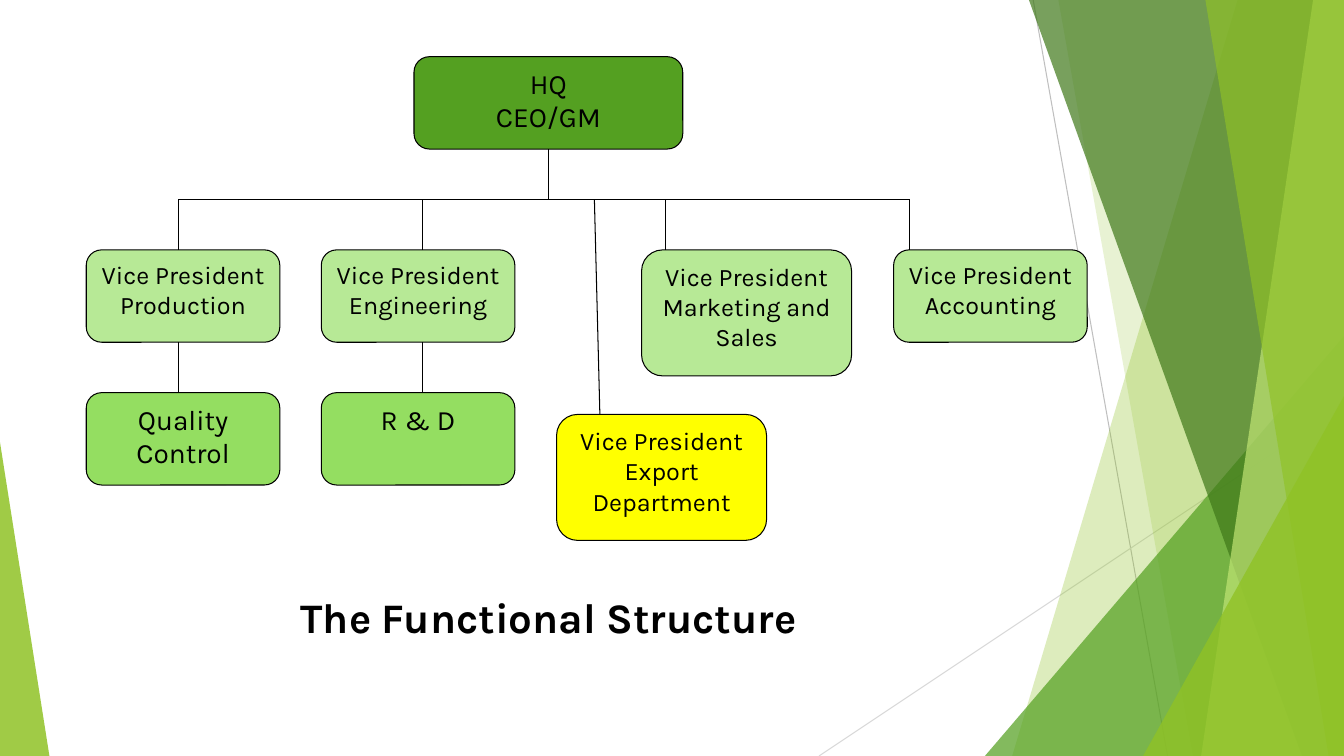
from pptx import Presentation
from pptx.dml.color import RGBColor
from pptx.enum.shapes import MSO_CONNECTOR as Link, MSO_SHAPE as Kind
from pptx.enum.text import MSO_ANCHOR as Anchor, PP_ALIGN as Align
from pptx.oxml.ns import qn
from pptx.util import Pt
from lxml.etree import SubElement

HUES = {
    "black": "000000", "lime": "90C226", "green": "54A021", "moss": "3F7819",
    "pale": "C0E474", "mint": "B7E996", "leaf": "94DE61", "yellow": "FFFF00",
    "grey": "BFBFBF", "mist": "D9D9D9",
}
WIDE, HIGH = 960, 540


class Chart:
    font = "Karla"

    def __init__(self, slide):
        self.slide = slide
        self.shapes = slide.shapes

    def hue(self, name):
        return RGBColor.from_string(HUES[name])

    def paint(self, shape, hue, alpha=100):
        shape.shadow.inherit = False
        shape.fill.solid()
        shape.fill.fore_color.rgb = self.hue(hue)
        if alpha < 100:
            color = shape._element.spPr.find(qn("a:solidFill"))[0]
            SubElement(color, qn("a:alpha"), val=str(alpha * 1000))

    def label(self, frame, text, size, bold=False):
        frame.word_wrap = True
        frame.margin_left = frame.margin_right = Pt(3.6)
        frame.margin_top = frame.margin_bottom = Pt(3.6)
        frame.vertical_anchor = Anchor.TOP
        frame.text = text
        for para in frame.paragraphs:
            para.alignment = Align.CENTER
            font = para.font
            font.name, font.size, font.bold = self.font, Pt(size), bold
            font.color.rgb = self.hue("black")

    def title(self, text, x, y, w, h):
        shape = self.shapes.title
        shape.left, shape.top, shape.width, shape.height = map(Pt, (x, y, w, h))
        self.label(shape.text_frame, text, 30, True)

    def box(self, text, x, y, w, h, hue, size=18):
        shape = self.shapes.add_shape(Kind.ROUNDED_RECTANGLE, *map(Pt, (x, y, w, h)))
        self.paint(shape, hue)
        shape.line.color.rgb = self.hue("black")
        shape.line.width = Pt(0.75)
        self.label(shape.text_frame, text, size)

    def line(self, x1, y1, x2, y2, hue="black"):
        link = self.shapes.add_connector(Link.STRAIGHT, *map(Pt, (x1, y1, x2, y2)))
        link.line.color.rgb = self.hue(hue)
        link.line.width = Pt(0.75)
        SubElement(link._element.spPr, qn("a:effectLst"))

    def band(self, top, foot, hue, alpha):
        pen = self.shapes.build_freeform(top, 0, scale=Pt(1))
        pen.add_line_segments([(WIDE, 0), (WIDE, HIGH), (foot, HIGH)], close=True)
        shape = pen.convert_to_shape()
        self.paint(shape, hue, alpha)
        shape.line.fill.background()

    def wedge(self, x, y, w, tip, hue, alpha):
        shape = self.shapes.add_shape(Kind.ISOSCELES_TRIANGLE, *map(Pt, (x, y, w, HIGH - y)))
        shape.adjustments[0] = tip
        self.paint(shape, hue, alpha)
        shape.line.fill.background()


def decorate(chart):
    chart.line(738, 0, 834, HIGH, "grey")
    chart.line(WIDE, 290, 585, HIGH, "mist")
    chart.band(884, 723, "lime", 30)
    chart.band(756, 852, "lime", 20)
    chart.wedge(703.5, 240, 256.5, 1, "green", 72)
    chart.band(735, 929.5, "moss", 70)
    chart.band(938, 858, "pale", 70)
    chart.band(861, 949, "lime", 65)
    chart.wedge(816.5, 283, 143.5, 1, "lime", 80)
    chart.wedge(0, 316, 35.3, 0, "lime", 85)


def main():
    deck = Presentation()
    deck.slide_width, deck.slide_height = Pt(WIDE), Pt(HIGH)
    chart = Chart(deck.slides.add_slide(deck.slide_layouts[5]))
    decorate(chart)
    chart.title("The Functional Structure", 113, 419, 558, 43.5)

    wide, tall, gap = 138.3, 66, 36
    head = 40.5
    bus = head + tall + gap
    row = bus + gap
    low = row + tall + gap
    chart.box("HQ\nCEO/GM", 295.7, head, 192, tall, "green", 20)
    for text, x in (
        ("Vice President Production", 61.6),
        ("Vice President\nEngineering", 229.5),
        ("Vice President\nAccounting", 638.3),
    ):
        chart.box(text, x, row, wide, tall, "mint")
    for text, x in (("Quality Control", 61.6), ("R & D", 229.5)):
        chart.box(text, x, low, wide, tall, "leaf", 20)
    chart.box("Vice President Marketing and Sales", 458.3, row, 150, 90, "mint")

    left, mid, right = 127.5, 301.5, 649.5
    chart.line(391.7, head + tall, 391.7, bus)
    chart.line(left, bus, right, bus)
    for x in (left, mid, 475.7, right):
        chart.line(x, bus, x, row)
    for x in (left, mid):
        chart.line(x, row + tall, x, low)
    chart.line(424.6, bus, 428.5, 296)
    chart.box("Vice President Export Department", 397.6, 296, 150, 90, "yellow")
    deck.save("out.pptx")


if __name__ == "__main__":
    main()
